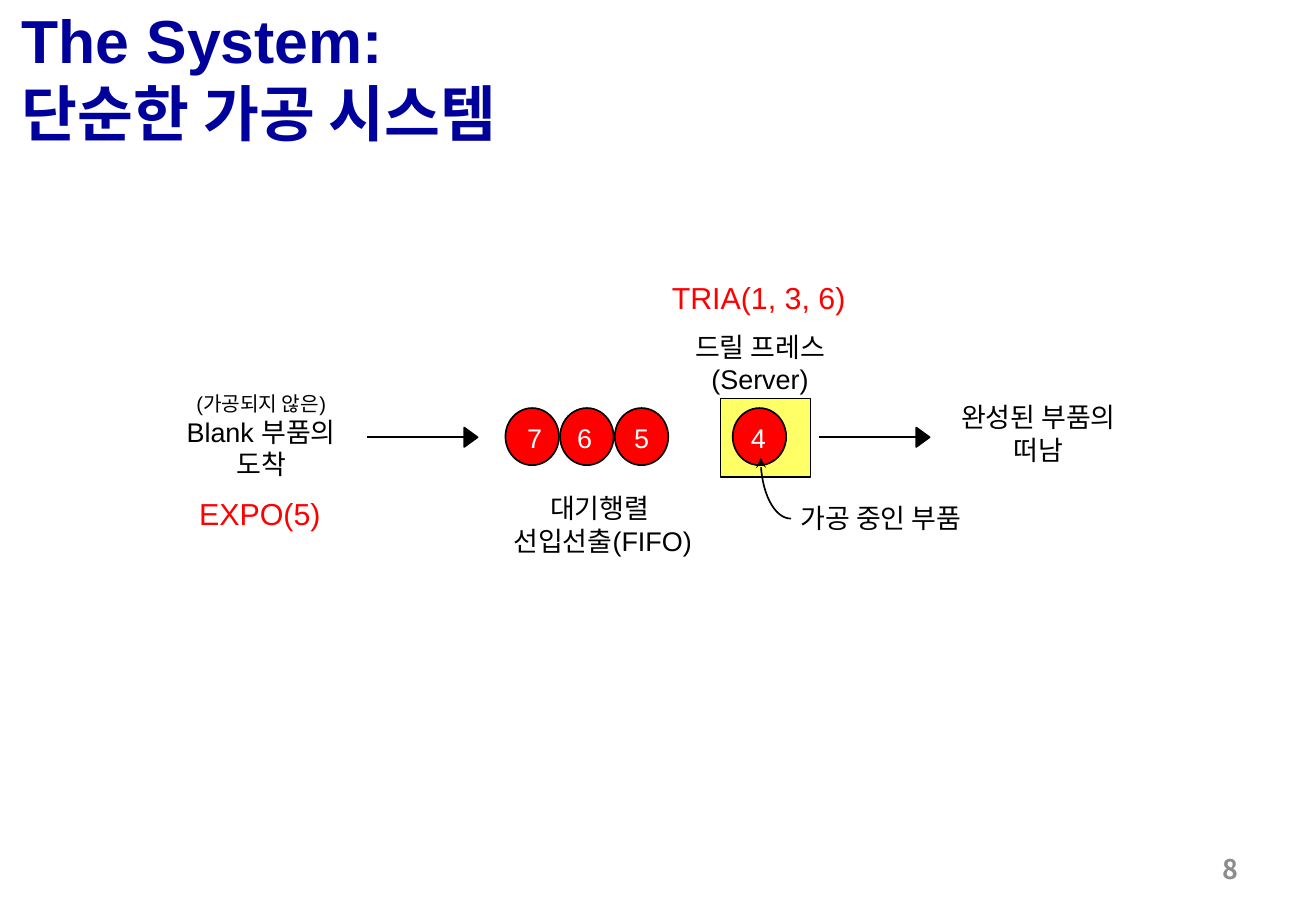
"""Build the slide showing a simple drilling system with a queue and a server."""
from dataclasses import dataclass

import lxml.etree
import pptx
import pptx.dml.color
import pptx.enum.shapes
import pptx.enum.text
import pptx.oxml.ns
import pptx.shapes.autoshape
import pptx.shapes.base
import pptx.slide
import pptx.text.text
import pptx.util

Inches = pptx.util.Inches
Align = pptx.enum.text.PP_ALIGN
Preset = pptx.enum.shapes.MSO_SHAPE


@dataclass(frozen=True)
class Theme:
    latin: str = "Arial"
    korean: str = "Noto Sans CJK KR"
    navy: str = "00009B"
    red: str = "FF0000"
    yellow: str = "FFFF66"
    black: str = "000000"
    white: str = "FFFFFF"
    gray: str = "8C8C8C"
    title_size: int = 36
    formula_size: int = 18
    body_size: int = 16
    note_size: int = 12
    line_width: int = 1


THEME = Theme()


@dataclass(frozen=True)
class Box:
    left: float
    top: float
    width: float
    height: float

    def lengths(self) -> tuple[int, ...]:
        return tuple(Inches(value) for value in (self.left, self.top, self.width, self.height))


@dataclass(frozen=True)
class Label:
    text: str
    box: Box
    color: str = THEME.black
    size: int = THEME.body_size
    align: Align = Align.CENTER
    wrap: bool = False
    first_size: int | None = None


@dataclass(frozen=True)
class Part:
    number: str
    circle_left: float
    number_left: float


LABELS = [
    Label("EXPO(5)", Box(1.54, 4.03, 1.21, 0.4), THEME.red, THEME.formula_size, Align.LEFT),
    Label("TRIA(1, 3, 6)", Box(5.43, 2.25, 1.65, 0.4), THEME.red, THEME.formula_size, Align.LEFT),
    Label("(가공되지 않은)\nBlank 부품의\n도착", Box(1.4, 3.17, 1.5, 0.84), first_size=THEME.note_size),
    Label("완성된 부품의\n떠남", Box(7.74, 3.25, 1.61, 0.64)),
    Label("드릴 프레스\n(Server)", Box(5.56, 2.67, 1.39, 0.64)),
    Label("대기행렬 \n선입선출(FIFO)", Box(4.08, 4, 1.76, 0.64)),
    Label("가공 중인 부품", Box(6.49, 4.08, 1.68, 0.37), align=Align.LEFT),
]
PARTS = [Part("4", 6.03, 6.08), Part("5", 5.06, 5.12), Part("6", 4.61, 4.65), Part("7", 4.16, 4.24)]
SERVER = Box(5.93, 3.28, 0.74, 0.65)
FLOW_STARTS = [3.02, 6.74]
FLOW_Y = 3.6
POINTER_CURVE = [(6.51, 4.27), (6.37, 4.27), (6.26, 4.05), (6.26, 3.77)]


def rgb(color: str) -> pptx.dml.color.RGBColor:
    return pptx.dml.color.RGBColor.from_string(color)


def format_paragraph(paragraph: pptx.text.text._Paragraph, size: int, color: str, align: Align,
                     bold: bool = False, latin: str = THEME.latin) -> None:
    paragraph.alignment = align
    for run in paragraph.runs:
        run.font.size = pptx.util.Pt(size)
        run.font.bold = bold
        run.font.color.rgb = rgb(color)
        run.font.name = latin
        properties = run._r.get_or_add_rPr()
        lxml.etree.SubElement(properties, pptx.oxml.ns.qn("a:ea"), typeface=THEME.korean)


def add_label(slide: pptx.slide.Slide, label: Label) -> None:
    frame = slide.shapes.add_textbox(*label.box.lengths()).text_frame
    frame.text = label.text
    frame.word_wrap = label.wrap
    frame.auto_size = pptx.enum.text.MSO_AUTO_SIZE.SHAPE_TO_FIT_TEXT
    for index, paragraph in enumerate(frame.paragraphs):
        size = label.first_size if index == 0 and label.first_size else label.size
        format_paragraph(paragraph, size, label.color, label.align)


def style_shape(shape: pptx.shapes.autoshape.Shape, fill: str | None) -> None:
    shape.shadow.inherit = False
    if fill:
        shape.fill.solid()
        shape.fill.fore_color.rgb = rgb(fill)
    else:
        shape.fill.background()
    style_line(shape)


def style_line(shape: pptx.shapes.base.BaseShape) -> None:
    shape.line.color.rgb = rgb(THEME.black)
    shape.line.width = pptx.util.Pt(THEME.line_width)


def add_preset(slide: pptx.slide.Slide, preset: Preset, box: Box, fill: str) -> None:
    style_shape(slide.shapes.add_shape(preset, *box.lengths()), fill)


def add_outline(slide: pptx.slide.Slide, points: list[tuple[float, float]],
                fill: str | None, close: bool) -> pptx.shapes.autoshape.Shape:
    corners = [(Inches(x), Inches(y)) for x, y in points]
    builder = slide.shapes.build_freeform(*corners[0])
    builder.add_line_segments(corners[1:], close=close)
    shape = builder.convert_to_shape()
    style_shape(shape, fill)
    return shape


def add_flow(slide: pptx.slide.Slide, start: float) -> None:
    connector = slide.shapes.add_connector(
        pptx.enum.shapes.MSO_CONNECTOR.STRAIGHT,
        Inches(start), Inches(FLOW_Y), Inches(start + 0.82), Inches(FLOW_Y))
    style_line(connector)
    lxml.etree.SubElement(connector._element.spPr, pptx.oxml.ns.qn("a:effectLst"))
    base = start + 0.8
    head = [(base, FLOW_Y - 0.08), (base, FLOW_Y + 0.08), (base + 0.11, FLOW_Y)]
    add_outline(slide, head, THEME.black, True)


def bezier_point(controls: list[tuple[float, float]], t: float) -> tuple[float, float]:
    weights = [(1 - t) ** 3, 3 * t * (1 - t) ** 2, 3 * t ** 2 * (1 - t), t ** 3]
    x, y = (sum(w * point[axis] for w, point in zip(weights, controls)) for axis in (0, 1))
    return x, y


def add_pointer(slide: pptx.slide.Slide, steps: int = 16) -> None:
    points = [bezier_point(POINTER_CURVE, step / steps) for step in range(steps + 1)]
    pointer = add_outline(slide, points, None, False)
    lxml.etree.SubElement(pointer.line._get_or_add_ln(), pptx.oxml.ns.qn("a:tailEnd"), type="stealth")


def add_title(slide: pptx.slide.Slide) -> None:
    title = slide.shapes.title
    title.left, title.top, title.width, title.height = Box(0.08, 0.08, 9.83, 1.08).lengths()
    frame = title.text_frame
    frame.text = "The System:\v단순한 가공 시스템"
    frame.auto_size = pptx.enum.text.MSO_AUTO_SIZE.NONE
    frame.vertical_anchor = pptx.enum.text.MSO_ANCHOR.MIDDLE
    format_paragraph(frame.paragraphs[0], THEME.title_size, THEME.navy, Align.LEFT, True)


def add_page_number(slide: pptx.slide.Slide) -> None:
    frame = slide.shapes.add_textbox(*Box(7.76, 6.95, 2.53, 0.4).lengths()).text_frame
    frame.text = "8"
    frame.word_wrap = True
    frame.vertical_anchor = pptx.enum.text.MSO_ANCHOR.MIDDLE
    format_paragraph(frame.paragraphs[0], THEME.body_size, THEME.gray, Align.RIGHT, True, THEME.korean)


def main() -> None:
    presentation = pptx.Presentation()
    presentation.slide_width, presentation.slide_height = Inches(10.83), Inches(7.5)
    slide = presentation.slides.add_slide(presentation.slide_layouts.get_by_name("Title Only"))
    add_title(slide)
    add_page_number(slide)
    add_preset(slide, Preset.RECTANGLE, SERVER, THEME.yellow)
    for part in PARTS:
        add_preset(slide, Preset.OVAL, Box(part.circle_left, 3.36, 0.44, 0.47), THEME.red)
    for start in FLOW_STARTS:
        add_flow(slide, start)
    for label in LABELS:
        add_label(slide, label)
    add_pointer(slide)
    for part in PARTS:
        box = Box(part.number_left, 3.42, 0.35, 0.37)
        add_label(slide, Label(part.number, box, THEME.white, align=Align.LEFT, wrap=True))
    presentation.save("out.pptx")


if __name__ == "__main__":
    main()
